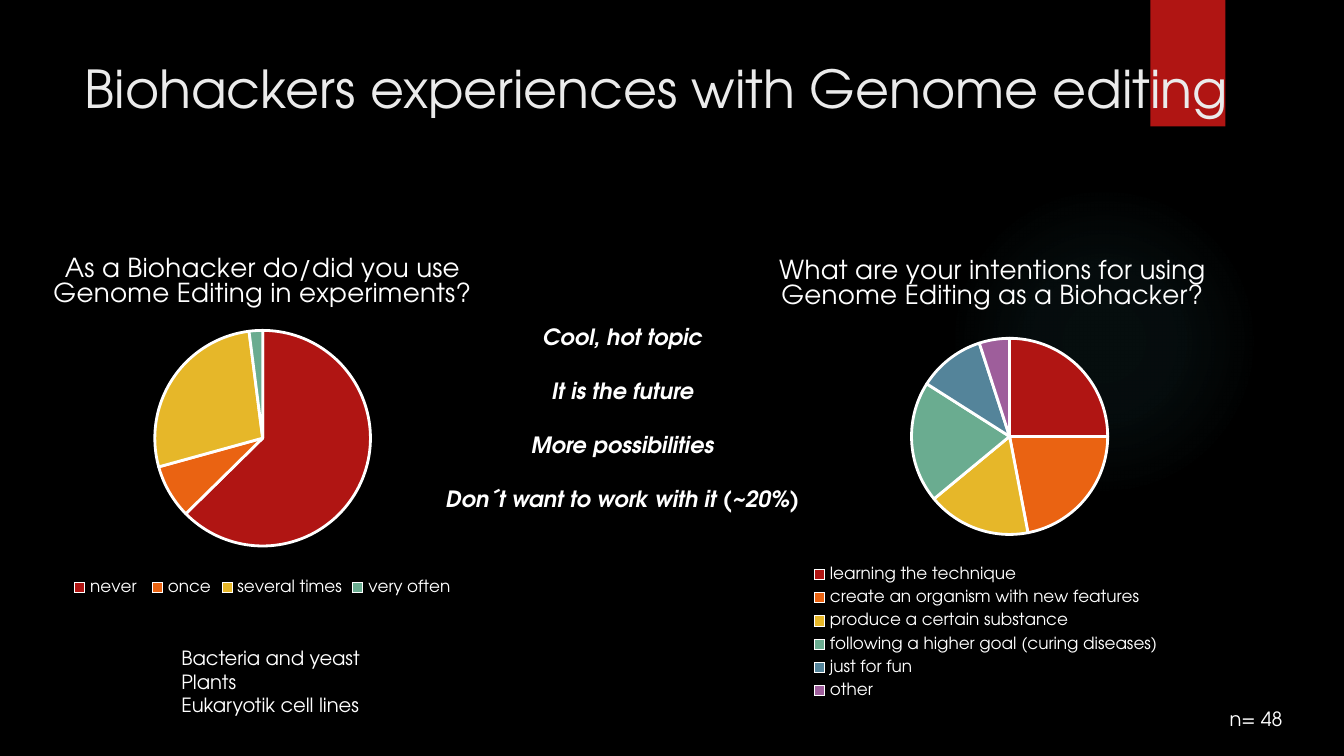
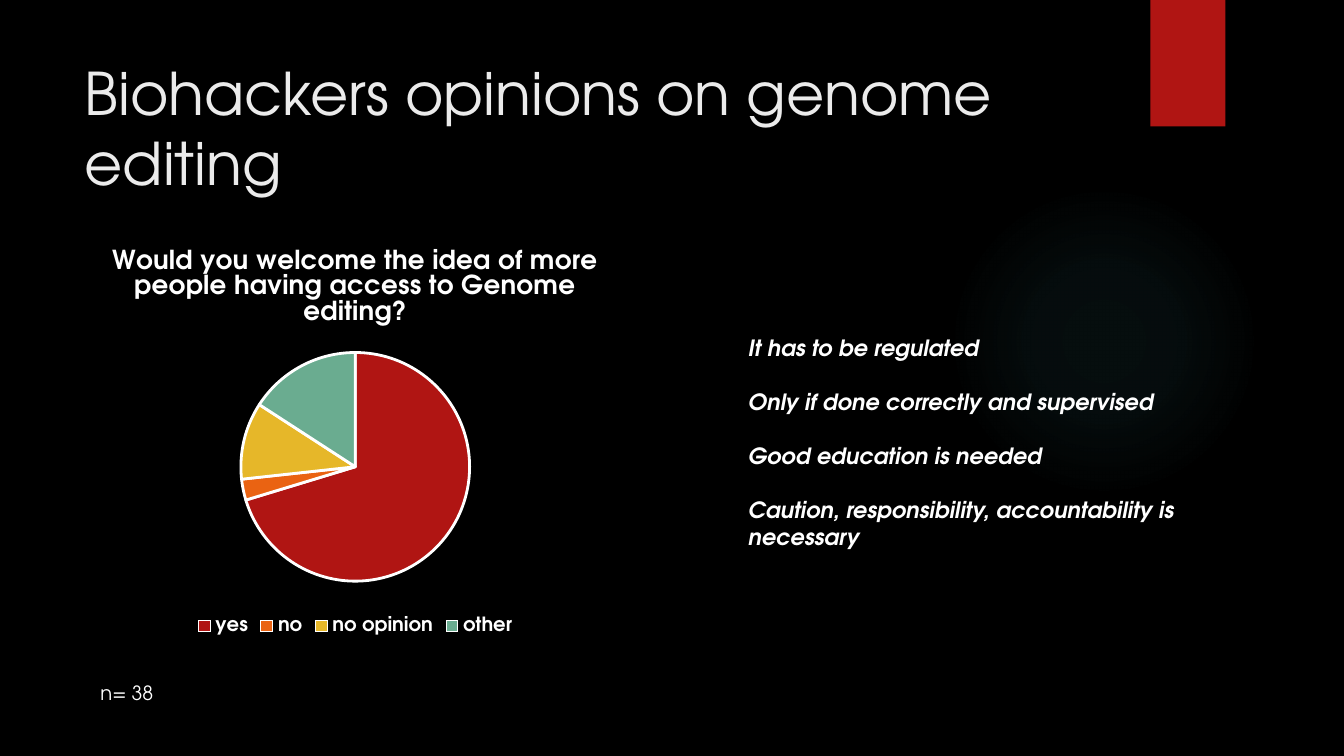
"""Builds two slides on how biohackers use and judge genome editing."""
from dataclasses import dataclass

from pptx import Presentation
from pptx.chart.data import CategoryChartData
from pptx.dml.color import RGBColor
from pptx.enum.chart import XL_CHART_TYPE as ChartType, XL_LEGEND_POSITION as LegendSpot
from pptx.enum.shapes import MSO_SHAPE as Preset
from pptx.enum.text import MSO_ANCHOR as Anchor, PP_ALIGN as Align
from pptx.oxml import parse_xml
from pptx.oxml.ns import nsdecls, qn
from pptx.util import Cm, Pt

TITLE_ONLY = 5


@dataclass(frozen=True)
class Theme:
    """Colours, font and type sizes of the deck."""
    font: str = "TeX Gyre Adventor"
    background: str = "000000"
    text: str = "FFFFFF"
    heading: str = "EBEBEB"
    accent: str = "B01513"
    glow: str = "50B9C1"
    slices: tuple = ("B01513", "EA6312", "E6B729", "6AAC90", "54849A", "9E5E9B")
    heading_size: float = 31.5
    question_size: float = 14
    quote_size: float = 12
    note_size: float = 10.5
    legend_size: float = 9
    chart_size: float = 10
    slice_border: float = 1.5


def rgb(code):
    """Turn a hex code into a colour."""
    return RGBColor.from_string(code)


def style_font(font, theme, size, color=None, bold=False, italic=False):
    """Apply the deck's type style to a font."""
    font.name, font.size = theme.font, Pt(size)
    font.bold, font.italic = bold, italic
    font.color.rgb = rgb(color or theme.text)


def write(frame, lines, theme, size, align=Align.LEFT, gap=0, **look):
    """Fill a text frame with one paragraph per line."""
    frame.word_wrap = True
    frame.vertical_anchor = Anchor.TOP
    for index, line in enumerate(lines):
        paragraph = frame.add_paragraph() if index else frame.paragraphs[0]
        paragraph.alignment = align
        paragraph.space_before = Pt(gap if index else 0)
        run = paragraph.add_run()
        run.text = line
        style_font(run.font, theme, size, **look)


def place(item, box):
    """Move and size an element to a box given in centimetres."""
    item.left, item.top, item.width, item.height = map(Cm, box)


def manual_layout(box, inner=False):
    """Return a chart layout for a box given in fractions of the chart."""
    target = '<c:layoutTarget val="inner"/>' if inner else ""
    modes = "".join(f'<c:{side}Mode val="edge"/>' for side in "xy")
    sizes = "".join(f'<c:{key} val="{part}"/>' for key, part in zip("xywh", box))
    return parse_xml(f'<c:layout {nsdecls("c")}><c:manualLayout>{target}{modes}{sizes}'
                     '</c:manualLayout></c:layout>')


class Deck:
    """Holds the theme and the current slide."""

    def __init__(self, theme):
        """Start a deck with the shared background."""
        self.theme = theme
        self.deck = Presentation()
        self.deck.slide_width, self.deck.slide_height = Cm(25.4), Cm(14.29)
        self.layout = self.deck.slide_layouts[TITLE_ONLY]
        backdrop = self.layout.background.fill
        backdrop.solid()
        backdrop.fore_color.rgb = rgb(theme.background)
        self.slide = None

    def new_slide(self, title, width, size=None):
        """Add a slide with its title."""
        self.slide = self.deck.slides.add_slide(self.layout)
        if len(self.deck.slides) == 1:
            self.decorate_layout()
        heading = self.slide.shapes.title
        place(heading, (1.35, 0.94, width, 2.92))
        write(heading.text_frame, [title], self.theme, size or self.theme.heading_size,
              color=self.theme.heading)

    def decorate_layout(self):
        """Put the glow and the red ribbon on the shared layout."""
        glow = self.shape(Preset.OVAL, (17.93, 3.51, 5.87, 5.87), self.theme.glow)
        stops = "".join(
            f'<a:gs pos="{spot}000"><a:srgbClr val="{self.theme.glow}">'
            f'<a:alpha val="{alpha}000"/></a:srgbClr></a:gs>'
            for spot, alpha in ((0, 7), (36, 6), (69, 0)))
        gradient = parse_xml(
            f'<a:gradFill {nsdecls("a")}><a:gsLst>{stops}</a:gsLst><a:path path="circle">'
            '<a:fillToRect l="50000" t="50000" r="50000" b="50000"/></a:path></a:gradFill>')
        properties = glow.element.spPr
        properties.replace(properties.find(qn("a:solidFill")), gradient)
        ribbon = self.shape(Preset.RECTANGLE, (21.74, 0, 1.42, 2.39), self.theme.accent)
        for decoration in (glow, ribbon):
            self.layout.shapes.element.append(decoration.element)

    def shape(self, preset, box, color):
        """Add a plain filled shape."""
        figure = self.slide.shapes.add_shape(preset, *map(Cm, box))
        figure.shadow.inherit = False
        figure.fill.solid()
        figure.fill.fore_color.rgb = rgb(color)
        figure.line.fill.background()
        return figure

    def text(self, lines, box, **look):
        """Add a text box."""
        look.setdefault("size", self.theme.note_size)
        write(self.slide.shapes.add_textbox(*map(Cm, box)).text_frame, lines, self.theme, **look)

    def quotes(self, lines, box, align=Align.LEFT):
        """Add spaced bold italic statements."""
        self.text(lines, box, size=self.theme.quote_size, align=align, gap=14.4,
                  bold=True, italic=True)

    def pie(self, question, answers, box, plot, legend_box=None, legend_size=None, bold=False):
        """Add a pie chart with its question and legend."""
        theme = self.theme
        survey = CategoryChartData()
        survey.categories = list(answers)
        survey.add_series("Series 1", list(answers.values()))
        chart = self.slide.shapes.add_chart(ChartType.PIE, *map(Cm, box), survey).chart
        style_font(chart.font, theme, theme.chart_size, bold=bold)
        chart.has_title = True
        write(chart.chart_title.text_frame, [question], theme, theme.question_size,
              align=Align.CENTER, bold=bold)
        chart.chart_title.include_in_layout = False
        chart.has_legend = True
        legend = chart.legend
        legend.position, legend.include_in_layout = LegendSpot.BOTTOM, False
        style_font(legend.font, theme, legend_size or theme.legend_size, bold=bold)
        if legend_box:
            legend.element.find(qn("c:legendPos")).addnext(manual_layout(legend_box)) \
                if hasattr(legend, "element") else \
                chart.element.find(f".//{qn('c:legendPos')}").addnext(manual_layout(legend_box))
        area = chart.element.find(f".//{qn('c:plotArea')}")
        for automatic in area.findall(qn("c:layout")):
            area.remove(automatic)
        area.insert(0, manual_layout(plot, inner=True))
        pie = chart.plots[0]
        pie.vary_by_categories = True
        for index, color in zip(range(len(answers)), theme.slices):
            piece = pie.series[0].points[index].format
            piece.fill.solid()
            piece.fill.fore_color.rgb = rgb(color)
            piece.line.color.rgb = rgb(theme.text)
            piece.line.width = Pt(theme.slice_border)

    def save(self):
        """Write the deck to disk."""
        self.deck.save("out.pptx")


def experiences(deck):
    """Build the slide on experiences."""
    deck.new_slide("Biohackers experiences with Genome editing", 22.78, size=28)
    deck.text(["n= 48"], (22.99, 13.23, 3.99, 0.71))
    deck.quotes(["Cool, hot topic", "It is the future", "More possibilities",
                 "Don´t want to work with it (~20%)"],
                (7.92, 5.99, 7.7, 5.38), align=Align.CENTER)
    deck.text(["Bacteria and yeast", "Plants", "Eukaryotik cell lines"],
              (3.18, 12.09, 6.78, 1.6))
    deck.pie("What are your intentions for using Genome Editing as a Biohacker?",
             {"learning the technique": 25, "create an organism with new features": 22,
              "produce a certain substance": 17,
              "following a higher goal (curing diseases)": 20,
              "just for fun": 11, "other": 5},
             (12.32, 4.45, 12.88, 9.27), plot=(0.38, 0.21, 0.29, 0.4),
             legend_box=(0.23, 0.66, 0.52, 0.3))
    deck.pie("As a Biohacker do/did you use Genome Editing in experiments?",
             {"never ": 62, "once": 8, "several times": 27, "very often": 2},
             (-1.07, 4.45, 12.07, 6.91), plot=(0.33, 0.26, 0.34, 0.59))


def opinions(deck):
    """Build the slide on opinions."""
    deck.new_slide("Biohackers opinions on genome editing", 19.58)
    deck.pie("Would you welcome the idea of more people having access to Genome editing?",
             {"yes": 71, "no": 3, "no opinion": 11, "other": 16},
             (0.71, 4.29, 12.01, 7.82), plot=(0.32, 0.3, 0.36, 0.56),
             legend_size=deck.theme.note_size, bold=True)
    deck.text(["n= 38"], (1.65, 12.75, 3.99, 0.71))
    deck.quotes(["It has to be regulated", "Only if done correctly and supervised",
                 "Good education is needed",
                 "Caution, responsibility, accountability is necessary"],
                (13.89, 6.2, 9.53, 4.37))


def main():
    """Build and save the deck."""
    deck = Deck(Theme())
    experiences(deck)
    opinions(deck)
    deck.save()


if __name__ == "__main__":
    main()
